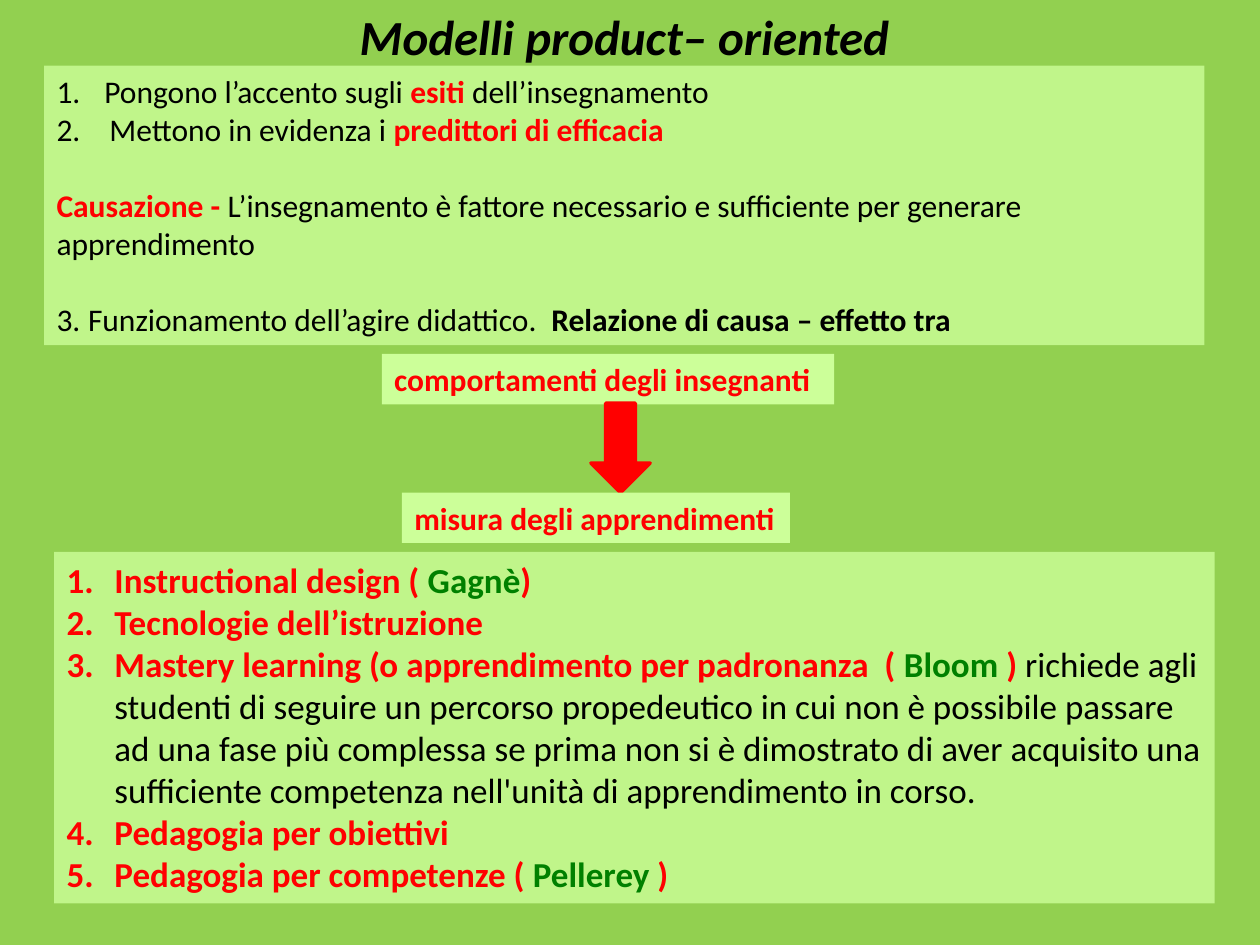
import pptx
import pptx.util
import pptx.dml.color
import pptx.enum.shapes
import pptx.enum.text
import pptx.oxml.ns
from lxml import etree

Inches, Pt = pptx.util.Inches, pptx.util.Pt
SHAPE = pptx.enum.shapes.MSO_SHAPE
ALIGN = pptx.enum.text.PP_ALIGN
ANCHOR = pptx.enum.text.MSO_ANCHOR
FIT = pptx.enum.text.MSO_AUTO_SIZE


class Theme:
    font = "Calibri"
    back, panel = "92D050", "CCFF99"
    black, red, green = "000000", "FF0000", "008000"
    title, large, body = 28, 20, 18


# Run styles: colour, bold, italic
STYLES = {
    "plain": (Theme.black, False, False),
    "bold": (Theme.black, True, False),
    "head": (Theme.black, True, True),
    "key": (Theme.red, True, False),
    "name": (Theme.green, True, False),
}


def tint(color):
    return pptx.dml.color.RGBColor.from_string(color)


def assign(target, values):
    for name, value in values.items():
        setattr(target, name, value)


def paint(fill, color, alpha=100):
    fill.solid()
    fill.fore_color.rgb = tint(color)
    if alpha < 100:
        node = fill._xPr.find(".//" + pptx.oxml.ns.qn("a:srgbClr"))
        etree.SubElement(node, pptx.oxml.ns.qn("a:alpha"), val=str(alpha * 1000))


def number(para, start, hang):
    """Number a paragraph, with a hanging indent in inches."""
    props = para._p.get_or_add_pPr()
    props.set("marL", str(Inches(hang)))
    props.set("indent", str(-Inches(hang)))
    etree.SubElement(props, pptx.oxml.ns.qn("a:buAutoNum"),
                     type="arabicPeriod", startAt=str(start))


def add_runs(para, runs, size):
    for text, style in runs:
        run = para.add_run()
        run.text = text
        color, bold, italic = STYLES[style]
        assign(run.font, {"name": Theme.font, "size": Pt(size),
                          "bold": bold, "italic": italic})
        run.font.color.rgb = tint(color)


def write(shape, paras, size, align=ALIGN.LEFT, wrap=True):
    """Each paragraph is a dict: runs, and optional start, hang, gap."""
    frame = shape.text_frame
    assign(frame, {"word_wrap": wrap, "vertical_anchor": ANCHOR.TOP,
                   "auto_size": FIT.SHAPE_TO_FIT_TEXT})
    for i, item in enumerate(paras):
        para = frame.add_paragraph() if i else frame.paragraphs[0]
        assign(para, {"alignment": align, "space_before": Pt(item.get("gap", 0))})
        if "start" in item:
            number(para, item["start"], item.get("hang", 0.38))
        add_runs(para, item["runs"], size)


def add_block(slide, kind, box, color, alpha=100):
    shape = slide.shapes.add_shape(kind, *map(Inches, box))
    shape.shadow.inherit = False
    paint(shape.fill, color, alpha)
    shape.line.fill.background()
    return shape


def add_panel(slide, box, paras, size):
    write(add_block(slide, SHAPE.RECTANGLE, box, Theme.panel, 80), paras, size)


def add_label(slide, box, text):
    shape = add_block(slide, SHAPE.RECTANGLE, box, Theme.panel)
    write(shape, [{"runs": [(text, "key")]}], Theme.body, wrap=False)


def add_arrow(slide, box):
    shape = add_block(slide, SHAPE.DOWN_ARROW, box, Theme.red)
    paint(shape.line.fill, Theme.red)
    shape.line.width = Pt(2)


def add_title(slide, box, text):
    title = slide.shapes.title
    assign(title, dict(zip(("left", "top", "width", "height"), map(Inches, box))))
    write(title, [{"runs": [(text, "head")]}], Theme.title, ALIGN.CENTER)


FEATURES = [
    {"start": 1, "runs": [("Pongono l’accento sugli ", "plain"), ("esiti ", "key"),
                          ("dell’insegnamento", "plain")]},
    {"start": 2, "hang": 0.42, "runs": [("Mettono in evidenza i ", "plain"),
                                        ("predittori di efficacia", "key")]},
    {"gap": 22, "runs": [
        ("Causazione - ", "key"),
        ("L’insegnamento è fattore necessario e sufficiente per generare "
         "apprendimento", "plain")]},
    {"start": 3, "hang": 0.25, "gap": 22, "runs": [
        ("Funzionamento dell’agire didattico.  ", "plain"),
        ("Relazione di causa – effetto tra", "bold")]},
]

MODELS = [
    [("Instructional design ( ", "key"), ("Gagnè", "name"), (")", "key")],
    [("Tecnologie dell’istruzione", "key")],
    [("Mastery learning (o apprendimento per padronanza  ( ", "key"),
     ("Bloom", "name"), (" )", "key"),
     (" richiede agli studenti di seguire un percorso propedeutico in cui non è "
      "possibile passare ad una fase più complessa se prima non si è dimostrato "
      "di aver acquisito una sufficiente competenza nell'unità di apprendimento "
      "in corso.", "plain")],
    [("Pedagogia per obiettivi", "key")],
    [("Pedagogia per competenze ( ", "key"), ("Pellerey", "name"), (" )", "key")],
]


def main():
    deck = pptx.Presentation()
    assign(deck, {"slide_width": Inches(10), "slide_height": Inches(7.5)})
    slide = deck.slides.add_slide(deck.slide_layouts[5])
    paint(slide.background.fill, Theme.back)

    # Title and features
    add_title(slide, (0, 0, 10, 0.57), "Modelli product– oriented ")
    add_panel(slide, (0.35, 0.52, 9.21, 2.22), FEATURES, Theme.body)

    # Cause and effect
    add_label(slide, (3.03, 2.81, 3.59, 0.4), "comportamenti degli insegnanti")
    add_arrow(slide, (4.69, 3.2, 0.47, 0.71))
    add_label(slide, (3.19, 3.91, 3.08, 0.4), "misura degli apprendimenti")

    # Numbered models
    models = [{"start": 1, "runs": runs} for runs in MODELS]
    add_panel(slide, (0.43, 4.38, 9.21, 2.79), models, Theme.large)

    deck.save("out.pptx")


if __name__ == "__main__":
    main()
